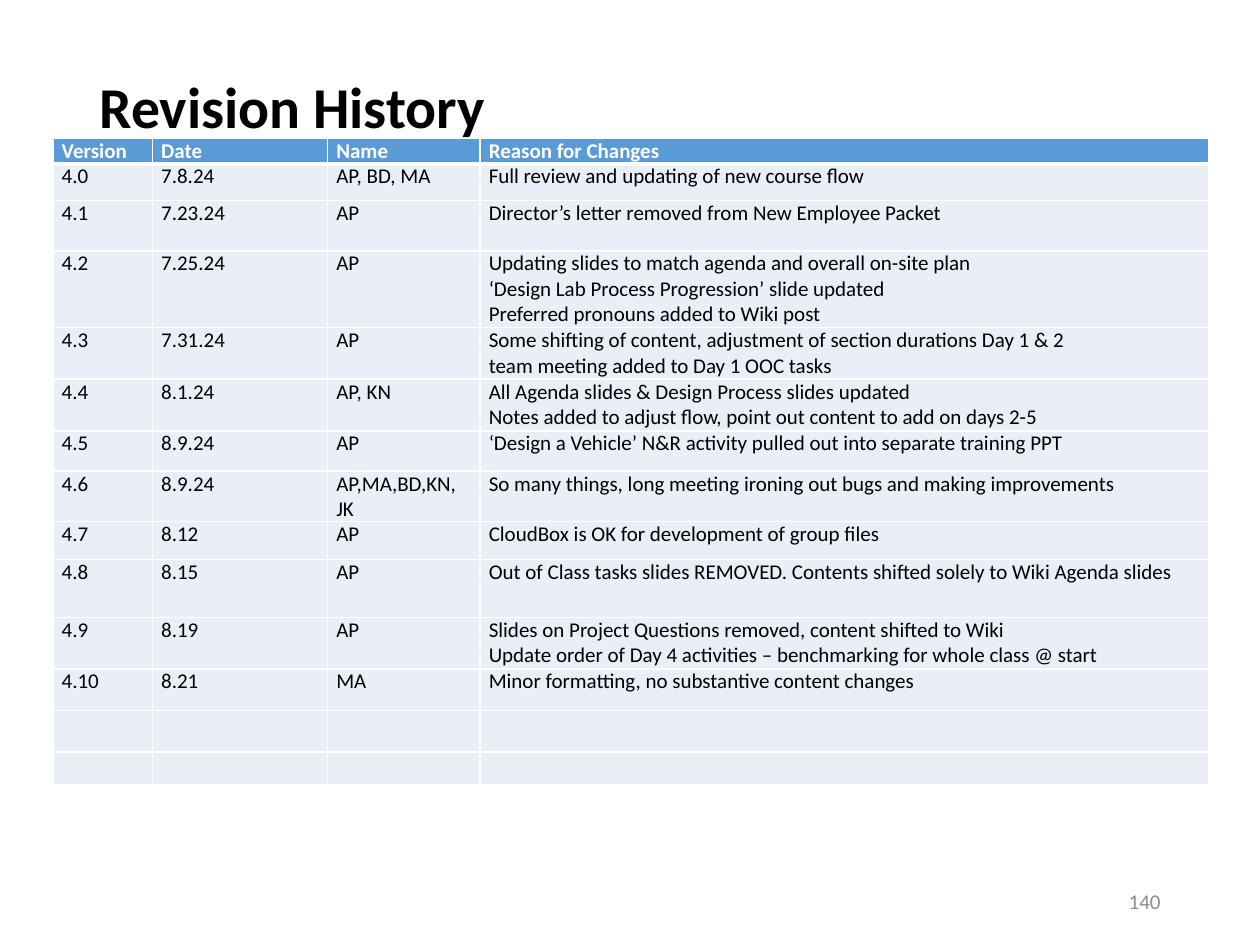
import pptx
import pptx.dml.color
import pptx.enum.text
import pptx.oxml.ns
import pptx.util
from lxml import etree

Inches = pptx.util.Inches
Pt = pptx.util.Pt
qn = pptx.oxml.ns.qn
PP_ALIGN = pptx.enum.text.PP_ALIGN
ANCHOR = pptx.enum.text.MSO_ANCHOR

FONT = "Calibri"
TABLE_SIZE = 12
COLORS = {
    "text": "000000",
    "white": "FFFFFF",
    "header": "5B9BD5",
    "body": "EAEFF7",
    "number": "8C8C8C",
}

COLUMN_WIDTHS = [0.79, 1.39, 1.21, 5.78]
ROW_HEIGHTS = [0.2, 0.29, 0.4, 0.61, 0.41, 0.41, 0.32,
               0.4, 0.3, 0.46, 0.41, 0.33, 0.33, 0.26]
# Line feeds in a cell separate its paragraphs
REVISIONS = [
    ("Version", "Date", "Name", "Reason for Changes"),
    ("4.0", "7.8.24", "AP, BD, MA", "Full review and updating of new course flow"),
    ("4.1", "7.23.24", "AP", "Director’s letter removed from New Employee Packet"),
    ("4.2", "7.25.24", "AP",
     "Updating slides to match agenda and overall on-site plan\n"
     "‘Design Lab Process Progression’ slide updated\n"
     "Preferred pronouns added to Wiki post"),
    ("4.3", "7.31.24", "AP",
     "Some shifting of content, adjustment of section durations Day 1 & 2\n"
     "team meeting added to Day 1 OOC tasks"),
    ("4.4", "8.1.24", "AP, KN",
     "All Agenda slides & Design Process slides updated\n"
     "Notes added to adjust flow, point out content to add on days 2-5"),
    ("4.5", "8.9.24", "AP",
     "‘Design a Vehicle’ N&R activity pulled out into separate training PPT"),
    ("4.6", "8.9.24", "AP,MA,BD,KN, JK",
     "So many things, long meeting ironing out bugs and making improvements"),
    ("4.7", "8.12", "AP", "CloudBox is OK for development of group files"),
    ("4.8", "8.15", "AP",
     "Out of Class tasks slides REMOVED. Contents shifted solely to Wiki Agenda slides"),
    ("4.9", "8.19", "AP",
     "Slides on Project Questions removed, content shifted to Wiki\n"
     "Update order of Day 4 activities – benchmarking for whole class @ start"),
    ("4.10", "8.21", "MA", "Minor formatting, no substantive content changes"),
    ("",) * 4,
    ("",) * 4,
]


def rgb(name):
    return pptx.dml.color.RGBColor.from_string(COLORS[name])


def write_text(frame, text, size=TABLE_SIZE, color="text", bold=False,
               align=PP_ALIGN.LEFT, line_spacing=1.0):
    """Write one paragraph per line of text, all in the same format."""
    for index, line in enumerate(text.split("\n")):
        para = frame.add_paragraph() if index else frame.paragraphs[0]
        para.alignment = align
        para.line_spacing = line_spacing
        if not line:
            # An empty paragraph takes its height from its end mark
            etree.SubElement(para._p, qn("a:endParaRPr"), sz=str(size * 100))
            continue
        span = para.add_run()
        span.text = line
        span.font.name = FONT
        span.font.size = Pt(size)
        span.font.bold = bold
        span.font.color.rgb = rgb(color)


def add_text_box(page, text, left, top, width, height, bottom_inset=0.05, **text_format):
    box = page.shapes.add_textbox(Inches(left), Inches(top), Inches(width), Inches(height))
    frame = box.text_frame
    frame.word_wrap = True
    frame.vertical_anchor = ANCHOR.MIDDLE
    frame.margin_bottom = Inches(bottom_inset)
    write_text(frame, text, **text_format)


def set_borders(cell, top=1, bottom=1):
    """Draw white borders; they must come before the fill in the cell properties."""
    properties = cell._tc.get_or_add_tcPr()
    widths = {"a:lnL": 1, "a:lnR": 1, "a:lnT": top, "a:lnB": bottom}
    for index, (tag, width) in enumerate(widths.items()):
        line = etree.Element(qn(tag), w=str(Pt(width)))
        fill = etree.SubElement(line, qn("a:solidFill"))
        etree.SubElement(fill, qn("a:srgbClr"), val=COLORS["white"])
        properties.insert(index, line)


def add_revision_table(page, left, top):
    frame = page.shapes.add_table(
        len(REVISIONS), len(COLUMN_WIDTHS), Inches(left), Inches(top),
        Inches(sum(COLUMN_WIDTHS)), Inches(sum(ROW_HEIGHTS)))
    table = frame.table
    table.horz_banding = False
    for column, width in zip(table.columns, COLUMN_WIDTHS):
        column.width = Inches(width)
    for index, (row, height, texts) in enumerate(zip(table.rows, ROW_HEIGHTS, REVISIONS)):
        row.height = Inches(height)
        header = index == 0
        for cell, text in zip(row.cells, texts):
            cell.margin_left = cell.margin_right = Inches(0.07)
            cell.margin_top = cell.margin_bottom = 0
            cell.fill.solid()
            cell.fill.fore_color.rgb = rgb("header" if header else "body")
            set_borders(cell, top=3 if index == 1 else 1, bottom=3 if header else 1)
            write_text(cell.text_frame, text, bold=header,
                       color="white" if header else "text")


def main():
    deck = pptx.Presentation()
    deck.slide_width = Inches(10)
    deck.slide_height = Inches(7.5)
    page = deck.slides.add_slide(deck.slide_layouts[6])

    # Title, lifted clear of the table by its bottom inset
    add_text_box(page, "Revision History", 0.69, 0.4, 8.62, 1.45,
                 bottom_inset=0.55, size=33, bold=True, line_spacing=0.9)

    # Revision table
    add_revision_table(page, 0.42, 1.1)

    # Page number
    add_text_box(page, "140", 7.06, 6.95, 2.25, 0.4,
                 color="number", align=PP_ALIGN.RIGHT)

    deck.save("out.pptx")


if __name__ == "__main__":
    main()
